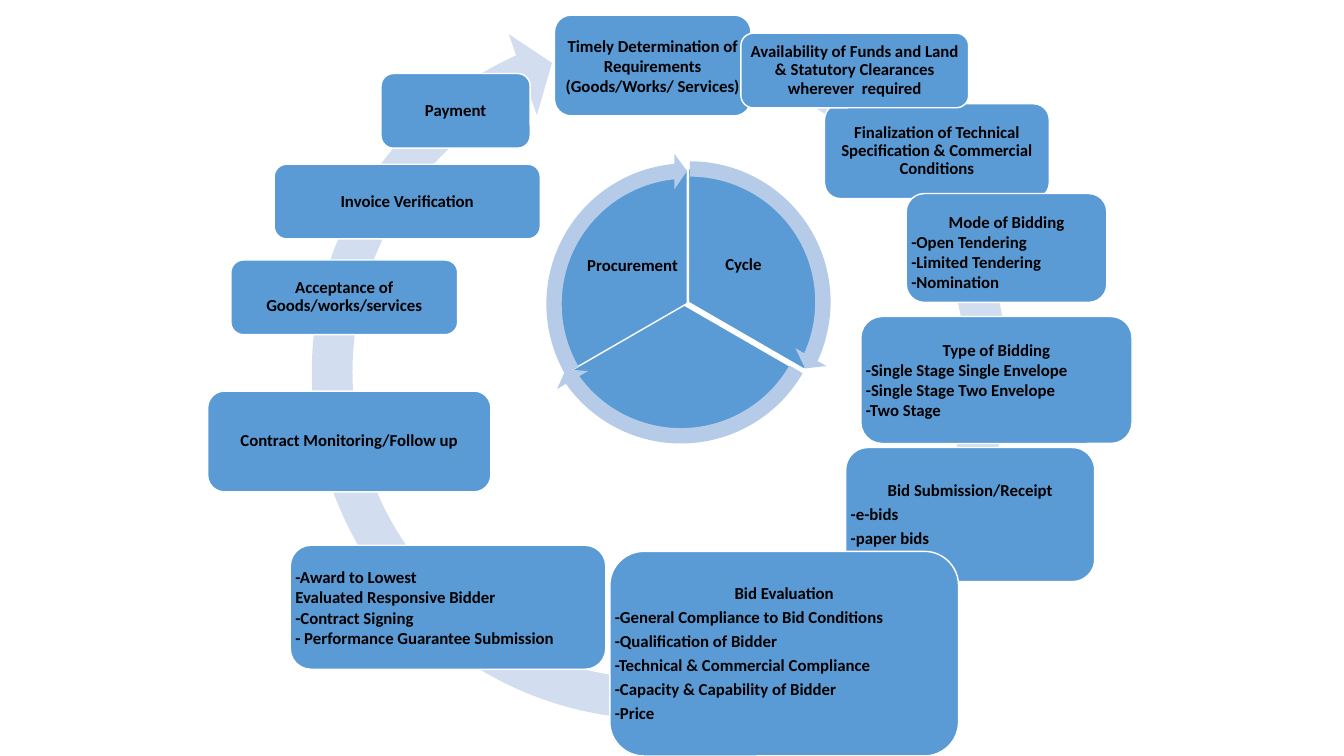
from pptx import Presentation
from pptx.dml.color import RGBColor
from pptx.enum.shapes import MSO_SHAPE
from pptx.enum.text import MSO_ANCHOR, PP_ALIGN
from pptx.util import Inches, Pt

ROUNDED = MSO_SHAPE.ROUNDED_RECTANGLE
ARROW = MSO_SHAPE.CIRCULAR_ARROW
PIE = MSO_SHAPE.PIE
CENTER, LEFT = PP_ALIGN.CENTER, PP_ALIGN.LEFT
MIDDLE = MSO_ANCHOR.MIDDLE

BLUE, WHITE, BLACK = "5B9BD5", "FFFFFF", "000000"
OUTER_ARROW, INNER_ARROW = "D2DEEF", "B5CBE7"
CELL = Inches(0.1)
COLUMNS, ROWS = 133.33, 75
TIGHT, SPACED = (1, 0), (0.9, 4.2)

presentation = Presentation()
presentation.slide_width = int(COLUMNS * CELL)
presentation.slide_height = ROWS * CELL
slide = presentation.slides.add_slide(presentation.slide_layouts[6])


def add_figure(kind, cells, fill, adjustments=(), outline=None):
    shape = slide.shapes.add_shape(kind, *[int(cell * CELL) for cell in cells])
    shape.shadow.inherit = False
    shape.fill.solid()
    shape.fill.fore_color.rgb = RGBColor.from_string(fill)
    if outline:
        shape.line.color.rgb = RGBColor.from_string(outline)
        shape.line.width = Pt(1)
    else:
        shape.line.fill.background()
    for index, value in enumerate(adjustments):
        shape.adjustments[index] = value


def add_label(cells, headings, items, spacing, inset=0.5, top_inset=None):
    label = slide.shapes.add_textbox(*[int(cell * CELL) for cell in cells])
    text_frame = label.text_frame
    text_frame.word_wrap = True
    text_frame.vertical_anchor = MIDDLE
    text_frame.margin_left = text_frame.margin_right = int(inset * CELL)
    text_frame.margin_bottom = int(inset * CELL)
    text_frame.margin_top = int((top_inset or inset) * CELL)
    text_frame.text = "\n".join(headings + items)
    for index, paragraph in enumerate(text_frame.paragraphs):
        paragraph.alignment = CENTER if index < len(headings) else LEFT
        paragraph.line_spacing = spacing[0]
        paragraph.space_after = Pt(spacing[1])
        font = paragraph.runs[0].font
        font.name, font.size, font.bold = "Calibri", Pt(12), True
        font.color.rgb = RGBColor.from_string(BLACK)


add_figure(ARROW, (28.7, 0.2, 73.4, 73.4), OUTER_ARROW,
           (0.055, 3.31, 147.21, 168.34, 0.058))

steps = [
    ((55, 1.5, 19.5, 10),
     ["Timely Determination of Requirements", "(Goods/Works/ Services)"], [], TIGHT),
    ((81.8, 10.3, 22.3, 9.4),
     ["Finalization of Technical Specification & Commercial Conditions"], [], SPACED),
    ((89.9, 19.2, 19.9, 10.8), ["Mode of Bidding"],
     ["-Open Tendering", "-Limited Tendering", "-Nomination"], TIGHT, 0.5, 1.3),
    ((85.4, 31.4, 26.9, 12.6), ["Type of Bidding"],
     ["-Single Stage Single Envelope", "-Single Stage Two Envelope", "-Two Stage"], TIGHT),
    ((83.9, 44.4, 24.7, 13.3), ["Bid Submission/Receipt"],
     ["-e-bids", "-paper bids"], SPACED),
    ((60.5, 54.7, 34.6, 20.3), ["Bid Evaluation"],
     ["-General Compliance to Bid Conditions", "-Qualification of Bidder",
      "-Technical & Commercial Compliance", "-Capacity & Capability of Bidder",
      "-Price"], SPACED),
    ((28.8, 54.1, 31.3, 12.3), [],
     ["-Award to Lowest", "Evaluated Responsive Bidder", "-Contract Signing",
      "- Performance Guarantee Submission"], TIGHT),
    ((20.6, 38.8, 28.1, 10), ["Contract Monitoring/Follow up"], [], SPACED),
    ((73.5, 3.3, 22.6, 7.4),
     ["Availability of Funds and Land & Statutory Clearances wherever  required"],
     [], SPACED),
    ((22.9, 25.8, 22.5, 7.4), ["Acceptance of Goods/works/services"], [], SPACED),
    ((27.2, 16.3, 26.4, 7.4), ["Invoice Verification"], [], SPACED),
    ((37.8, 7.3, 14.8, 7.4), ["Payment"], [], SPACED),
]
for cells, *content in steps:
    add_figure(ROUNDED, cells, BLUE, outline=WHITE)
    add_label(cells, *content)

PIE_SIZE, RING_SIZE = 26.6, 29.9
sectors = [(55, 16.7, 162, 18), (54.3, 16.8, 18, 90), (54.9, 16.8, 90, 162)]
for left, top, start, end in sectors:
    add_figure(PIE, (left, top, PIE_SIZE, PIE_SIZE), BLUE, (start, end), WHITE)

for left, top, word in [(69, 22.3, "Cycle"), (58, 22.4, "Procurement")]:
    add_label((left, top, 9.5, 7.9), [word], [], SPACED, 0.2)

rings = [(53.5, 15, 14.73, 161.99), (52.6, 15.1, 86.72, 18.01), (53.2, 15.2, 158.73, 90)]
for left, top, end, start in rings:
    add_figure(ARROW, (left, top, RING_SIZE, RING_SIZE), INNER_ARROW,
               (0.051, 3.28, end, start, 0.059))

presentation.save("out.pptx")
